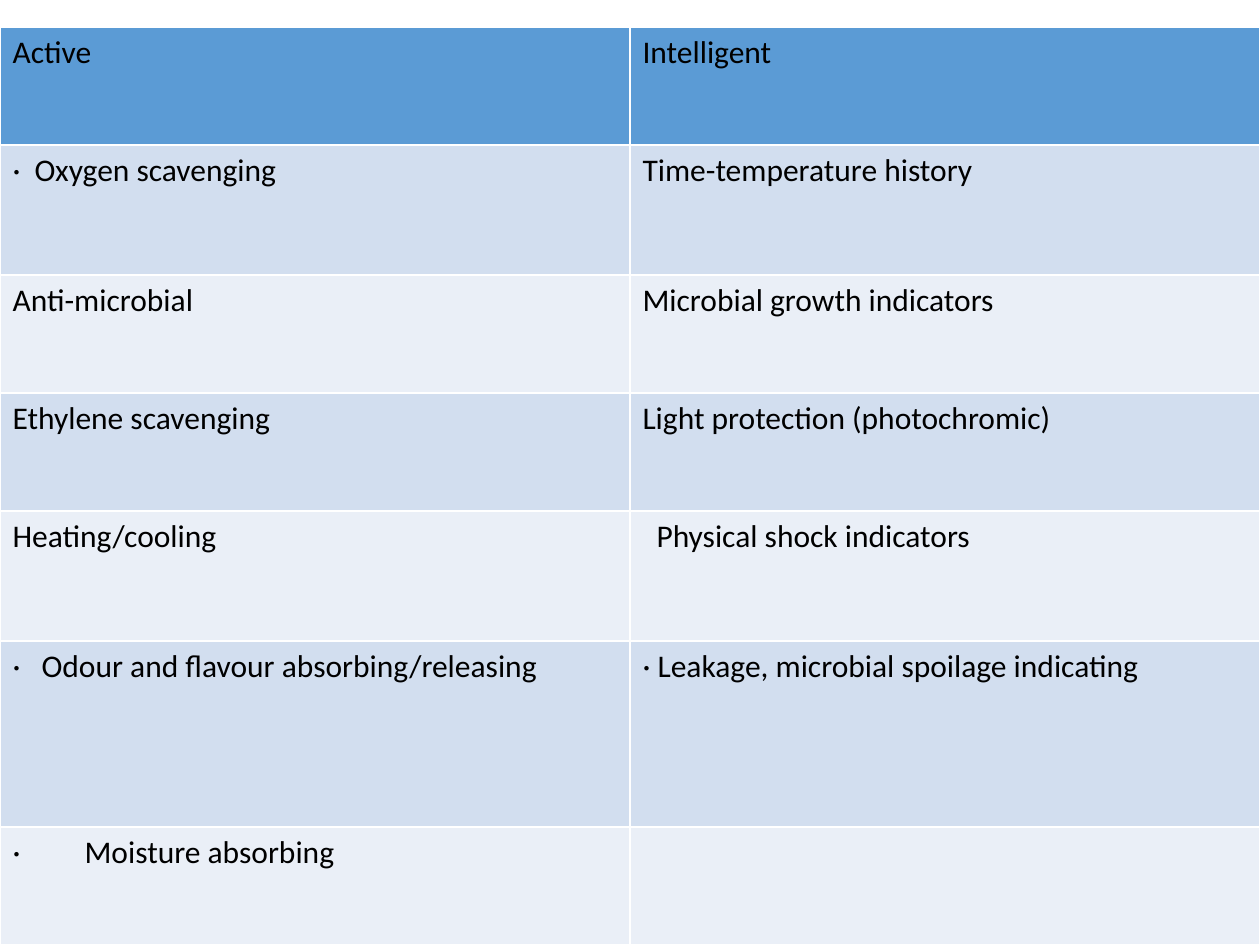
"""Build a slide with a table of active and intelligent packaging functions."""
from dataclasses import dataclass

from pptx import Presentation
from pptx.dml.color import RGBColor
from pptx.util import Pt

PX = 914400 // 126


@dataclass(frozen=True)
class Theme:
    font: str = "Calibri"
    size: int = 18
    text: str = "000000"
    header: str = "5B9BD5"
    bands: tuple = ("EAEFF7", "D2DEEF")


theme = Theme()
rows = [
    (118, ("Active", 0), ("Intelligent", 0)),
    (130, ("·\tOxygen scavenging", 22), ("Time-temperature history", 0)),
    (118, ("Anti-microbial", 0), ("Microbial growth indicators", 0)),
    (118, ("Ethylene scavenging", 0), ("Light protection (photochromic)", 0)),
    (130, ("Heating/cooling", 0), ("Physical shock indicators", 14)),
    (186, ("·\tOdour and flavour absorbing/releasing", 29),
     ("· Leakage, microbial spoilage indicating", 0)),
    (118, ("·\tMoisture absorbing", 72), ("", 0)),
]

deck = Presentation()
deck.slide_width, deck.slide_height = 1260 * PX, 945 * PX
page = deck.slides.add_slide(deck.slide_layouts[6])

height = sum(row[0] for row in rows)
frame = page.shapes.add_table(len(rows), 2, 0, 27 * PX, 1260 * PX, height * PX)
table = frame.table

for row_index, (row_height, *entries) in enumerate(rows):
    table.rows[row_index].height = row_height * PX
    fill_color = theme.bands[row_index % 2] if row_index else theme.header
    for column_index, (text, indent) in enumerate(entries):
        cell = table.cell(row_index, column_index)
        cell.fill.solid()
        cell.fill.fore_color.rgb = RGBColor.from_string(fill_color)
        para = cell.text_frame.paragraphs[0]
        para.font.size = Pt(theme.size)
        if not text:
            continue
        if indent:
            properties = para._p.get_or_add_pPr()
            properties.set("marL", str(indent * PX))
            properties.set("indent", str(-indent * PX if "\t" in text else 0))
        span = para.add_run()
        span.text = text
        span.font.name = theme.font
        span.font.size = Pt(theme.size)
        span.font.bold = False
        span.font.color.rgb = RGBColor.from_string(theme.text)

deck.save("out.pptx")
